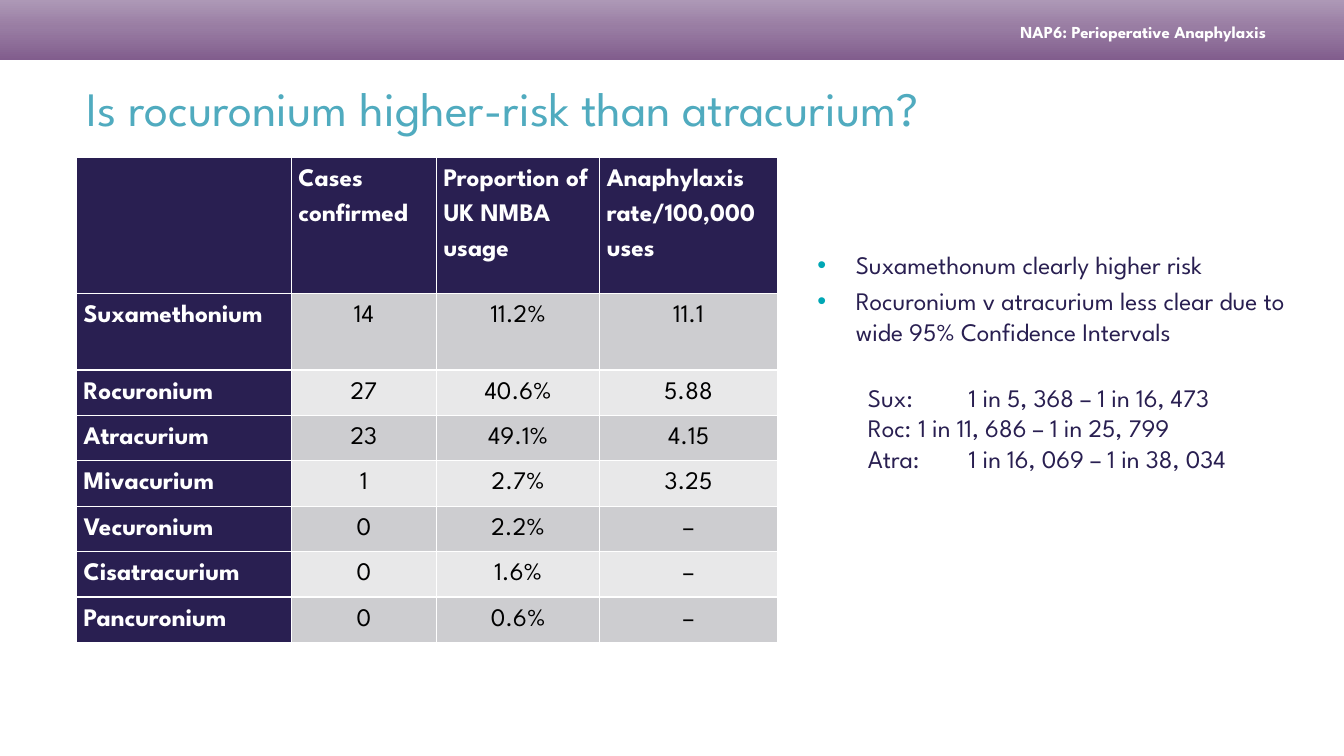
"""Build the slide comparing anaphylaxis rates of neuromuscular blocking agents."""
from copy import deepcopy

from lxml import etree
from pptx import Presentation
from pptx import util as u
from pptx.dml.color import RGBColor
from pptx.enum import shapes, text
from pptx.oxml import ns

FONT = "League Spartan"
WHITE = RGBColor(0xFF, 0xFF, 0xFF)
BLACK = RGBColor(0x00, 0x00, 0x00)
NAVY = RGBColor(0x29, 0x1F, 0x51)
AQUA = RGBColor(0x50, 0xAB, 0xBF)
TEAL = RGBColor(0x00, 0xA7, 0xB5)
DARK_GREY = RGBColor(0xCD, 0xCD, 0xD0)
LIGHT_GREY = RGBColor(0xE8, 0xE8, 0xE9)
BAND_STOPS = [
    (0, RGBColor(0x81, 0x5D, 0x8D)),
    (0.55, RGBColor(0x99, 0x7D, 0xA3)),
    (1, RGBColor(0xAD, 0x98, 0xB6)),
]
LEFT = u.Inches(0.76)


def style(para, size, color, bold=False):
    for span in para.runs:
        span.font.name = FONT
        span.font.size = u.Pt(size)
        span.font.bold = bold
        span.font.color.rgb = color


def add_element(parent, tag, **attributes):
    return etree.SubElement(parent, ns.qn(tag), attributes)


deck = Presentation()
deck.slide_width = u.Inches(13.33)
deck.slide_height = u.Inches(7.5)
page = deck.slides.add_slide(deck.slide_layouts[5])

band = page.shapes.add_shape(
    shapes.MSO_SHAPE.RECTANGLE, 0, 0, deck.slide_width, u.Inches(0.6))
band.shadow.inherit = False
band.line.fill.background()
band.fill.gradient()
band.fill.gradient_angle = 90
stop_list = band.fill._fill._gradFill.gsLst
stop_list.insert(1, deepcopy(stop_list[0]))
for stop, (position, color) in zip(band.fill.gradient_stops, BAND_STOPS):
    stop.position = position
    stop.color.rgb = color

header = page.shapes.add_textbox(
    u.Inches(8.35), u.Inches(0.18), u.Inches(4.45), u.Inches(0.28))
header.text_frame.word_wrap = True
header.text_frame.margin_right = u.Inches(0.24)
header.text_frame.vertical_anchor = text.MSO_ANCHOR.MIDDLE
header.text_frame.text = "NAP6: Perioperative Anaphylaxis"
header.text_frame.paragraphs[0].alignment = text.PP_ALIGN.RIGHT
style(header.text_frame.paragraphs[0], 12, WHITE, True)

title = page.shapes.title
title.left, title.top = LEFT, u.Inches(0.81)
title.width, title.height = u.Inches(11.24), u.Inches(0.51)
title.text_frame.text = "Is rocuronium higher-risk than atracurium?"
title.text_frame.auto_size = text.MSO_AUTO_SIZE.NONE
title.text_frame.vertical_anchor = text.MSO_ANCHOR.MIDDLE
title.text_frame.paragraphs[0].alignment = text.PP_ALIGN.LEFT
style(title.text_frame.paragraphs[0], 34.2, AQUA)

rows = [
    ("", "Cases confirmed", "Proportion of UK NMBA usage",
     "Anaphylaxis rate/100,000 uses"),
    ("Suxamethonium", "14", "11.2%", "11.1"),
    ("Rocuronium", "27", "40.6%", "5.88"),
    ("Atracurium", "23", "49.1%", "4.15"),
    ("Mivacurium", "1", "2.7%", "3.25"),
    ("Vecuronium", "0", "2.2%", "–"),
    ("Cisatracurium", "0", "1.6%", "–"),
    ("Pancuronium", "0", "0.6%", "–"),
]
widths = [2.13, 1.44, 1.62, 1.76]
heights = [1.17, 0.76] + [0.36] * 6
table = page.shapes.add_table(
    len(rows), len(widths), LEFT, u.Inches(1.56),
    u.Inches(sum(widths)), u.Inches(sum(heights))).table
table.first_col = True
for column, width in zip(table.columns, widths):
    column.width = u.Inches(width)
for r, (values, height) in enumerate(zip(rows, heights)):
    table.rows[r].height = u.Inches(height)
    for c, value in enumerate(values):
        cell = table.cell(r, c)
        heading = r == 0 or c == 0
        cell.margin_left = cell.margin_right = u.Inches(0.07)
        cell.margin_top = cell.margin_bottom = 0
        cell.fill.solid()
        cell.fill.fore_color.rgb = (
            NAVY if heading else DARK_GREY if r % 2 else LIGHT_GREY)
        cell.text_frame.text = value
        para = cell.text_frame.paragraphs[0]
        para.line_spacing = 1.5
        para.alignment = text.PP_ALIGN.LEFT if heading else text.PP_ALIGN.CENTER
        style(para, 18, WHITE if heading else BLACK, heading)

findings = [
    "Suxamethonum clearly higher risk",
    "Rocuronium v atracurium less clear due to wide 95% Confidence Intervals",
]
intervals = [
    "\tSux:\t\t1 in 5, 368 – 1 in 16, 473",
    "\tRoc:\t1 in 11, 686 – 1 in 25, 799",
    "\tAtra:\t1 in 16, 069 – 1 in 38, 034",
]
notes = page.shapes.add_textbox(
    u.Inches(8.01), u.Inches(2.42), u.Inches(5.16), u.Inches(3.11))
notes.text_frame.word_wrap = True
notes.text_frame.text = "\n".join(findings + intervals)
for i, para in enumerate(notes.text_frame.paragraphs):
    para.line_spacing = u.Pt(22)
    if i == 1:
        para.space_before = u.Pt(3.6)
    elif i == len(findings):
        para.space_before = u.Pt(25)
    properties = para._p.get_or_add_pPr()
    if i < len(findings):
        properties.set("marL", str(u.Inches(0.38)))
        properties.set("indent", str(-u.Inches(0.38)))
        bullet_color = add_element(properties, "a:buClr")
        add_element(bullet_color, "a:srgbClr", val=str(TEAL))
        add_element(properties, "a:buFont", typeface="Arial")
        add_element(properties, "a:buChar", char="•")
    else:
        tabs = add_element(properties, "a:tabLst")
        for step in range(1, 4):
            add_element(tabs, "a:tab", pos=str(u.Inches(0.5 * step)), algn="l")
    style(para, 18, NAVY)

deck.save("out.pptx")
